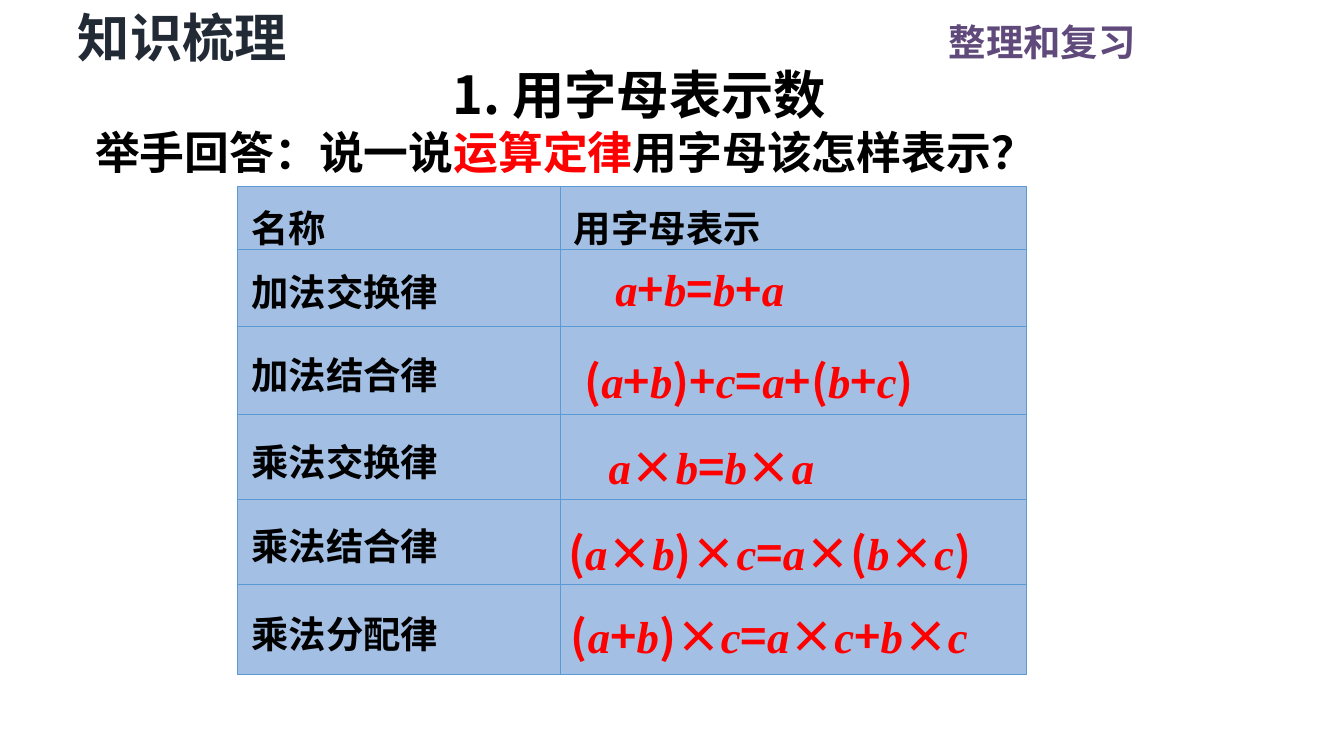
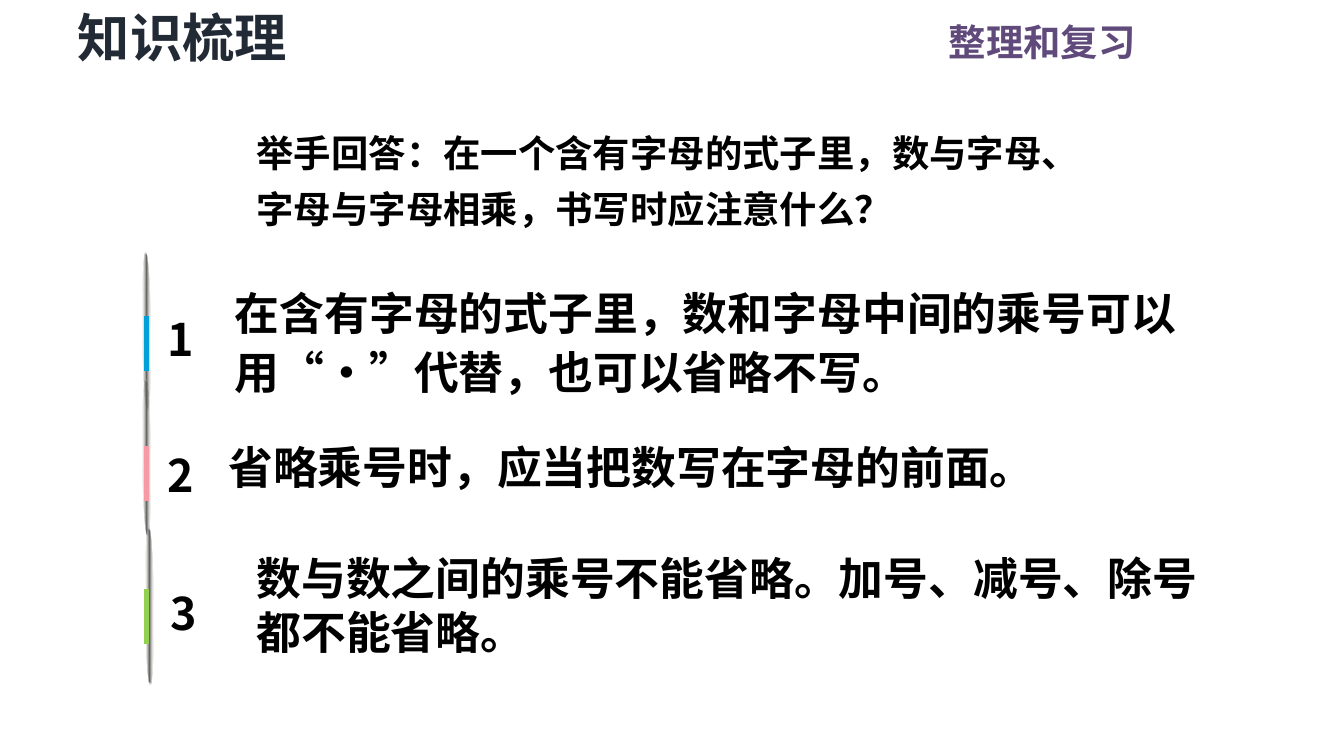
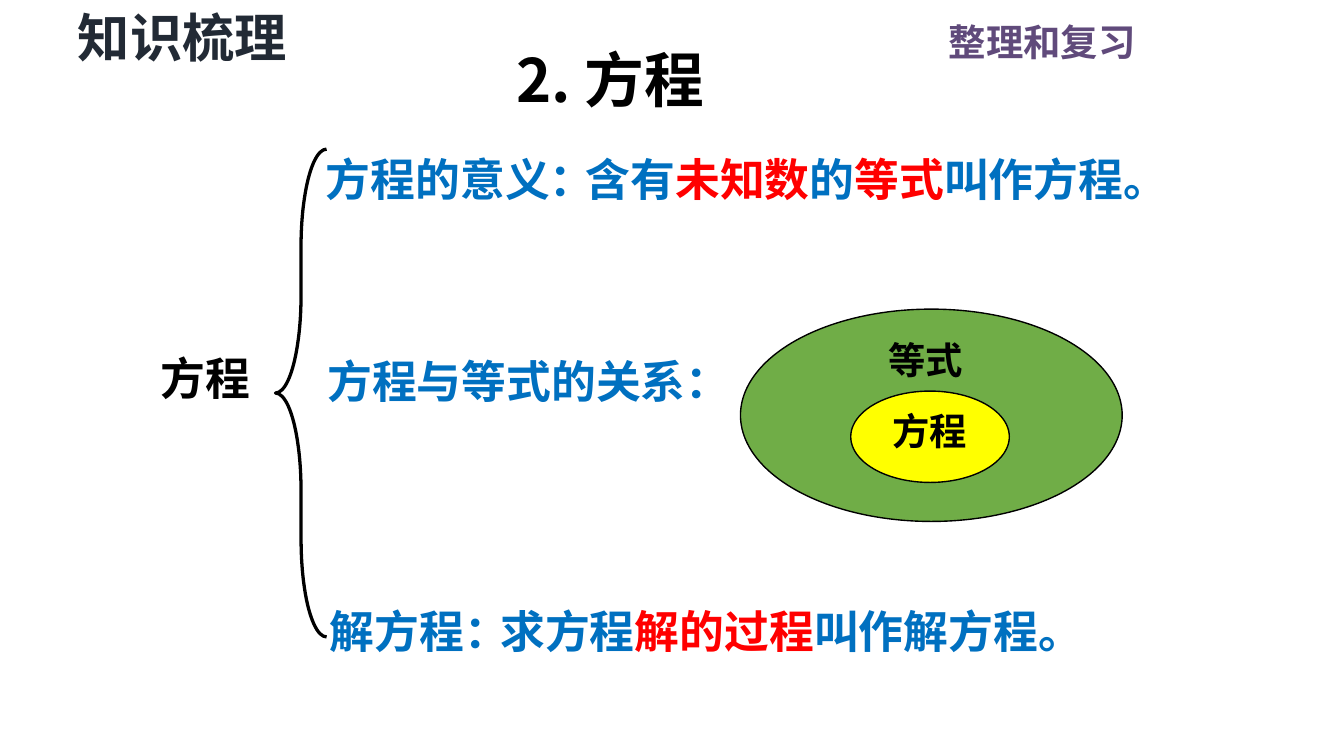
import itertools

import lxml.etree
import pptx
import pptx.dml.color
import pptx.enum.shapes
import pptx.enum.text
import pptx.oxml
import pptx.oxml.ns
import pptx.util

PX = 9144
SLIDE_W, SLIDE_H = pptx.util.Pt(720), pptx.util.Pt(405)
SANS, SERIF = "Noto Sans CJK SC", "Times New Roman"
BLACK, RED, BLUE = "000000", "FF0000", "0070C0"
NAVY, PURPLE, GREEN, YELLOW = "222A35", "604A7B", "70AD47", "FFFF00"
CELL, BORDER = "A3C0E4", "5B9BD5"
NEEDLE_DARK, NEEDLE_LIGHT = "595959", "EEECE1"
ALIGN = {
    "l": pptx.enum.text.PP_ALIGN.LEFT,
    "c": pptx.enum.text.PP_ALIGN.CENTER,
    "r": pptx.enum.text.PP_ALIGN.RIGHT,
    "j": pptx.enum.text.PP_ALIGN.JUSTIFY,
}
NS = 'xmlns:a="http://schemas.openxmlformats.org/drawingml/2006/main"'

SECTION, CHAPTER = "知识梳理", "整理和复习"

LAWS_TITLE = "1. 用字母表示数"
LAWS_QUESTION = "举手回答：说一说|运算定律|用字母该怎样表示？"
LAWS_HEAD = ("名称", "用字母表示")
LAWS = [
    ("加法交换律", "a+b=b+a", (448, 186, 185, 51)),
    ("加法结合律", "(a+b)+c=a+(b+c)", (425, 254, 305, 55)),
    ("乘法交换律", "a×b=b×a", (443, 318, 237, 55)),
    ("乘法结合律", "(a×b)×c=a×(b×c)", (413, 382, 339, 55)),
    ("乘法分配律", "(a+b)×c=a×c+b×c", (415, 444, 344, 55)),
]
LAW_COLS = (240, 347)
LAW_ROWS = (46, 57, 66, 63, 63, 67)

RULES_QUESTION = "举手回答：在一个含有字母的式子里，数与字母、字母与字母相乘，书写时应注意什么？"
RULES = [
    dict(text="在含有字母的式子里，数和字母中间的乘号可以用“•”代替，也可以省略不写。",
         box=(165, 203, 729, 100), number=(115, 227, 60, 50),
         needle=(50, 244, 118, 5), mark=235, color="02A0D8", spacing=pptx.util.Pt(32)),
    dict(text="省略乘号时，应当把数写在字母的前面。",
         box=(160, 322, 789, 50), number=(115, 328, 55, 50),
         needle=(50, 338, 118, 5), mark=332, color="F89AA5", spacing=None),
    dict(text="数与数之间的乘号不能省略。加号、减号、除号都不能省略。",
         box=(181, 405, 737, 91), number=(117, 431, 64, 50),
         needle=(52, 448, 118, 6), mark=438, color="92D050", spacing=None),
]
MARK_X, MARK_H = 109, 41

EQUATION_TITLE = "2. 方程"
EQUATION_LABELS = [
    ("方程", (109, 256, 88, 50), dict(color=BLACK)),
    ("方程的意义：", (231, 108, 223, 50), {}),
    ("方程与等式的关系：", (231, 258, 325, 50), {}),
    ("解方程：", (234, 444, 156, 50), {}),
    ("含有|未知数|的|等式|叫作方程。", (426, 108, 460, 50), dict(align="l")),
    ("求方程|解的过程|叫作解方程。", (359, 444, 460, 50), {}),
]
SETS = [
    ("等式", (551, 230, 284, 158), GREEN, (651, 246, 76, 44)),
    ("方程", (633, 291, 118, 68), YELLOW, (654, 299, 76, 44)),
]


def rgb(value):
    return pptx.dml.color.RGBColor.from_string(value)


def px(values):
    return [v * PX for v in values]


def accented(text):
    return [(part, {"color": RED} if i % 2 else {})
            for i, part in enumerate(text.split("|"))]


def formula(text):
    return [("".join(group), {"font": SERIF, "italic": True} if letter else {})
            for letter, group in itertools.groupby(text, str.isalpha)]


def write(tf, runs, align="l", spacing=None, **fmt):
    p = tf.paragraphs[0]
    p.alignment = ALIGN[align]
    if spacing:
        p.line_spacing = spacing
    for text, extra in runs:
        look = dict(size=24, color=BLACK, font=SANS, italic=False) | fmt | extra
        r = p.add_run()
        r.text = text
        f = r.font
        f.size, f.bold, f.italic = pptx.util.Pt(look["size"]), True, look["italic"]
        f.color.rgb = rgb(look["color"])
        f.name = look["font"]
        ea = lxml.etree.SubElement(r._r.get_or_add_rPr(), pptx.oxml.ns.qn("a:ea"))
        ea.set("typeface", look["font"])


def add_text(s, box, text, split=accented, inset=(10, 5), wrap=True, **fmt):
    tf = s.shapes.add_textbox(*px(box)).text_frame
    tf.word_wrap = wrap
    tf.auto_size = pptx.enum.text.MSO_AUTO_SIZE.SHAPE_TO_FIT_TEXT
    tf.margin_left = tf.margin_right = inset[0] * PX
    tf.margin_top = tf.margin_bottom = inset[1] * PX
    write(tf, split(text), **fmt)


def add_title(s, box, text, **fmt):
    add_text(s, box, text, inset=(7, 4), **fmt)


def add_shape(s, kind, box, fill=None, line=None, width=0.75):
    sp = s.shapes.add_shape(kind, *px(box))
    sp.shadow.inherit = False
    if fill:
        sp.fill.solid()
        sp.fill.fore_color.rgb = rgb(fill)
    else:
        sp.fill.background()
    if line:
        sp.line.color.rgb = rgb(line)
        sp.line.width = pptx.util.Pt(width)
    else:
        sp.line.fill.background()
    return sp


def add_needle(s, box):
    sp = add_shape(s, pptx.enum.shapes.MSO_SHAPE.OVAL, box)
    sp.rotation = 89.5
    spPr = sp._element.spPr
    grad = pptx.oxml.parse_xml(
        f'<a:gradFill {NS} rotWithShape="1"><a:gsLst>'
        f'<a:gs pos="0"><a:srgbClr val="{NEEDLE_DARK}"/></a:gs>'
        f'<a:gs pos="100000"><a:srgbClr val="{NEEDLE_LIGHT}"><a:alpha val="0"/></a:srgbClr></a:gs>'
        '</a:gsLst><a:path path="shape">'
        '<a:fillToRect l="50000" t="50000" r="50000" b="50000"/></a:path></a:gradFill>')
    spPr.replace(spPr.find(pptx.oxml.ns.qn("a:noFill")), grad)


def add_mark(s, top, color):
    line = s.shapes.add_connector(pptx.enum.shapes.MSO_CONNECTOR.STRAIGHT,
                                  *px((MARK_X, top, MARK_X, top + MARK_H)))
    line.line.color.rgb = rgb(color)
    line.line.width = pptx.util.Pt(3)
    lxml.etree.SubElement(line._element.spPr, pptx.oxml.ns.qn("a:effectLst"))


def style_cell(cell, text):
    tcPr = cell._tc.get_or_add_tcPr()
    for side in ("lnL", "lnR", "lnT", "lnB"):
        tcPr.append(pptx.oxml.parse_xml(
            f'<a:{side} {NS} w="6350"><a:solidFill><a:srgbClr val="{BORDER}"/>'
            f'</a:solidFill></a:{side}>'))
    cell.fill.solid()
    cell.fill.fore_color.rgb = rgb(CELL)
    cell.vertical_anchor = pptx.enum.text.MSO_ANCHOR.MIDDLE
    cell.margin_left = cell.margin_right = 10 * PX
    cell.margin_top = cell.margin_bottom = 5 * PX
    if text:
        write(cell.text_frame, [(text, {})], align="j", spacing=1.1, size=20)


def new_slide(prs):
    s = prs.slides.add_slide(prs.slide_layouts[6])
    add_text(s, (579, 9, 276, 44), CHAPTER, align="r", size=20, color=PURPLE)
    add_title(s, (51, 0, 202, 55), SECTION, size=28, color=NAVY)
    return s


def laws_slide(prs):
    s = new_slide(prs)
    rows = [LAWS_HEAD] + [(name, "") for name, _, _ in LAWS]
    box = (177, 139, sum(LAW_COLS), sum(LAW_ROWS))
    table = s.shapes.add_table(len(rows), len(LAW_COLS), *px(box)).table
    for column, width in zip(table.columns, px(LAW_COLS)):
        column.width = width
    for row, height, texts in zip(table.rows, px(LAW_ROWS), rows):
        row.height = height
        for cell, text in zip(row.cells, texts):
            style_cell(cell, text)
    for _, law, place in LAWS:
        add_text(s, place, law, split=formula, align="j", spacing=1.1, color=RED)
    add_text(s, (61, 88, 837, 50), LAWS_QUESTION)
    add_title(s, (330, 42, 348, 55), LAWS_TITLE, size=28)


def rules_slide(prs):
    s = new_slide(prs)
    add_text(s, (181, 84, 645, 94), RULES_QUESTION, size=20, spacing=pptx.util.Pt(30))
    for number, rule in enumerate(RULES, 1):
        add_needle(s, rule["needle"])
        add_text(s, rule["box"], rule["text"], spacing=rule["spacing"])
        add_text(s, rule["number"], str(number))
        add_mark(s, rule["mark"], rule["color"])


def equation_slide(prs):
    s = new_slide(prs)
    add_title(s, (377, 28, 265, 61), EQUATION_TITLE, size=32)
    brace = add_shape(s, pptx.enum.shapes.MSO_SHAPE.LEFT_BRACE, (205, 111, 38, 363),
                      line=BLACK, width=1.75)
    brace.adjustments[0] = 1.91
    for text, box, fmt in EQUATION_LABELS:
        add_text(s, box, text, wrap=False, **(dict(align="c", color=BLUE) | fmt))
    for name, oval, fill, label in SETS:
        add_shape(s, pptx.enum.shapes.MSO_SHAPE.OVAL, oval, fill, BLACK)
        add_text(s, label, name, wrap=False, align="c", size=20)


def main():
    prs = pptx.Presentation()
    prs.slide_width, prs.slide_height = SLIDE_W, SLIDE_H
    laws_slide(prs)
    rules_slide(prs)
    equation_slide(prs)
    prs.save("out.pptx")


if __name__ == "__main__":
    main()
